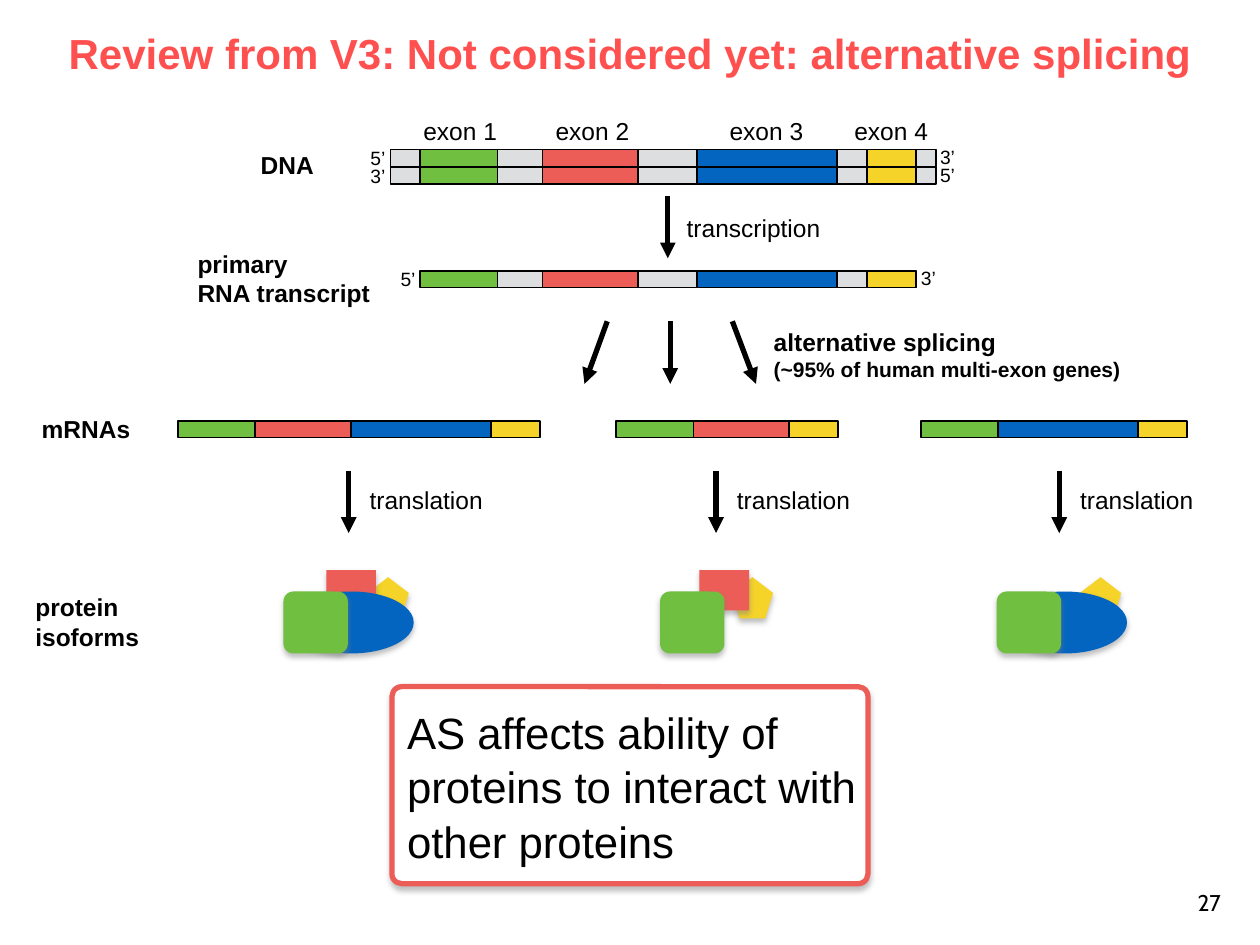
from lxml.etree import SubElement as Sub
from pptx import Presentation as Deck
from pptx.dml.color import RGBColor as Rgb
from pptx.enum.shapes import MSO_CONNECTOR as Link, MSO_SHAPE as Form
from pptx.enum.text import MSO_ANCHOR as Anchor, PP_ALIGN as Align
from pptx.oxml.ns import qn
from pptx.util import Pt

GREEN, RED, BLUE, GOLD = "70BF41", "EC5D57", "0365C0", "F5D328"
GREY, BLACK, WHITE = "DCDEE0", "000000", "FFFFFF"
WIDTHS = {GREEN: 44.3, RED: 54.6, BLUE: 80, GOLD: 28}
GENE = {GREEN: 240, RED: 310, BLUE: 398.2, GOLD: 495.4}


def hue(code):
    return Rgb.from_string(code)


class Sheet:
    font = "Arial"
    size = 14
    bar = 9.6

    def __init__(self, slide):
        self.slide = slide

    def words(self, frame, lines, wrap=False, inset=2.9, align=Align.LEFT,
              gap=None, tint=BLACK, **style):
        look = {"margin_left": Pt(inset), "margin_right": Pt(2.9),
                "margin_top": Pt(2.9), "margin_bottom": Pt(2.9),
                "word_wrap": wrap, "vertical_anchor": Anchor.MIDDLE}
        for key, value in look.items():
            setattr(frame, key, value)
        face = {"name": self.font, "size": Pt(self.size), "bold": False}
        for i, line in enumerate(lines):
            para = frame.paragraphs[0] if i == 0 else frame.add_paragraph()
            para.alignment = align
            para.line_spacing = gap
            run = para.add_run()
            run.text = line
            for key, value in (face | style).items():
                setattr(run.font, key, value)
            run.font.color.rgb = hue(tint)

    def title(self, text, box, **style):
        head = self.slide.shapes.title
        for key, value in zip(("left", "top", "width", "height"), box):
            setattr(head, key, Pt(value))
        self.words(head.text_frame, [text], wrap=True, align=Align.CENTER, **style)

    def label(self, box, *lines, **style):
        text = self.slide.shapes.add_textbox(*map(Pt, box))
        self.words(text.text_frame, lines, **style)
        return text.text_frame

    def shape(self, form, box, fill, line=None, width=1, shade=False, bend=None):
        item = self.slide.shapes.add_shape(form, *map(Pt, box))
        item.shadow.inherit = False
        item.fill.solid()
        item.fill.fore_color.rgb = hue(fill)
        if line:
            item.line.color.rgb = hue(line)
            item.line.width = Pt(width)
        else:
            item.line.fill.background()
        if bend:
            item.adjustments[0] = bend
        if shade:
            self.shade(item)
        return item

    def shade(self, item):
        group = item.element.spPr.find(qn("a:effectLst"))
        drop = Sub(group, qn("a:outerShdw"), blurRad=str(Pt(3)), dist=str(Pt(2)),
                   dir="5400000", rotWithShape="0")
        tint = Sub(drop, qn("a:srgbClr"), val="808080")
        Sub(tint, qn("a:alpha"), val="50000")

    def block(self, left, top, width, fill):
        self.shape(Form.RECTANGLE, (left, top, width, self.bar), fill, BLACK)

    def gene(self, left, top, width):
        self.block(left, top, width, GREY)
        for tint, start in GENE.items():
            self.block(start, top, WIDTHS[tint], tint)

    def splice(self, left, top, exons):
        for tint in exons:
            self.block(left, top, WIDTHS[tint], tint)
            left += WIDTHS[tint]

    def arrow(self, x1, y1, x2, y2):
        link = self.slide.shapes.add_connector(
            Link.STRAIGHT, *map(Pt, (x1, y1, x2, y2)))
        link.line.color.rgb = hue(BLACK)
        link.line.width = Pt(3)
        props = link.element.spPr
        Sub(props.find(qn("a:ln")), qn("a:tailEnd"), type="triangle")
        Sub(props, qn("a:effectLst"))

    def fold(self, left, exons, gold, red):
        parts = {
            GOLD: (Form.REGULAR_PENTAGON, (left + gold, 329.8, 23.6, 23.6), None),
            RED: (Form.RECTANGLE, (left + red, 325.8, 28.4, 23), None),
            BLUE: (Form.OVAL, (left + 3, 338, 71.4, 35.4), None),
            GREEN: (Form.ROUNDED_RECTANGLE, (left, 338, 36.8, 35.4), 0.16),
        }
        for tint, (form, box, bend) in parts.items():
            if tint in exons:
                self.shape(form, box, tint, shade=True, bend=bend)


def main():
    deck = Deck()
    deck.slide_width, deck.slide_height = Pt(720), Pt(540)
    page = Sheet(deck.slides.add_slide(deck.slide_layouts[5]))
    page.title("Review from V3: Not considered yet: alternative splicing",
               (5.5, 0, 709, 60), size=Pt(24), bold=True, tint="FF5050")

    page.gene(223.2, 85.5, 311.8)
    page.gene(223.2, 95.5, 311.8)
    page.gene(240.5, 154.7, 282.8)
    for i, left in enumerate((239, 314.6, 414, 485.3), 1):
        page.label((left, 63.4, 48.5, 22.3), f"exon {i}")
    for left, top, end in ((208.8, 81, "5’"), (208.8, 91, "3’"), (534.3, 80.2, "3’"),
                           (534.3, 90.4, "5’"), (226, 150, "5’"), (523.4, 149.4, "3’")):
        page.label((left, top, 14.5, 18.8), end, size=Pt(11))

    page.label((146, 83, 37, 22.3), "DNA", bold=True)
    page.label((110, 139, 105, 39.6), "primary", "RNA transcript", bold=True)
    page.label((20.9, 234, 64, 22.3), "mRNAs", bold=True)
    page.label((17.3, 335.5, 71.3, 39.6), "protein isoforms", wrap=True, bold=True)

    page.arrow(381.6, 112.3, 381.6, 147.6)
    page.label((389.5, 119, 83, 22.3), "transcription")
    for top, foot in ((347, 334), (383, 383), (418.5, 432)):
        page.arrow(top, 183.6, foot, 219.4)
    note = page.label((439.2, 183.6, 206, 37.4), "alternative splicing",
                      "(~95% of human multi-exon genes)", bold=True)
    note.paragraphs[1].runs[0].font.size = Pt(12)

    for strip, stem, fold, gold, red, exons in (
            (101.6, 199.3, 162, 48, 24.5, (GREEN, RED, BLUE, GOLD)),
            (352, 409.2, 377.2, 41, 22.5, (GREEN, RED, GOLD)),
            (526.2, 605.3, 569.6, 47.5, 0, (GREEN, BLUE, GOLD))):
        page.splice(strip, 240.4, exons)
        page.arrow(stem, 269, stem, 304.6)
        page.label((stem + 9, 274.6, 71, 22.3), "translation")
        page.fold(fold, exons, gold, red)

    card = page.shape(Form.ROUNDED_RECTANGLE, (224, 392.4, 272, 112.6), WHITE, RED,
                      width=3, shade=True, bend=0.05)
    page.words(card.text_frame, ("AS affects ability of", "proteins to interact with",
                                 "other proteins"), inset=7, gap=1.04, size=Pt(25), wrap=True)
    page.label((660.2, 504.7, 40.3, 22), "27", align=Align.RIGHT, wrap=True,
               name="Cabin", size=Pt(13))
    deck.save("out.pptx")


if __name__ == "__main__":
    main()
